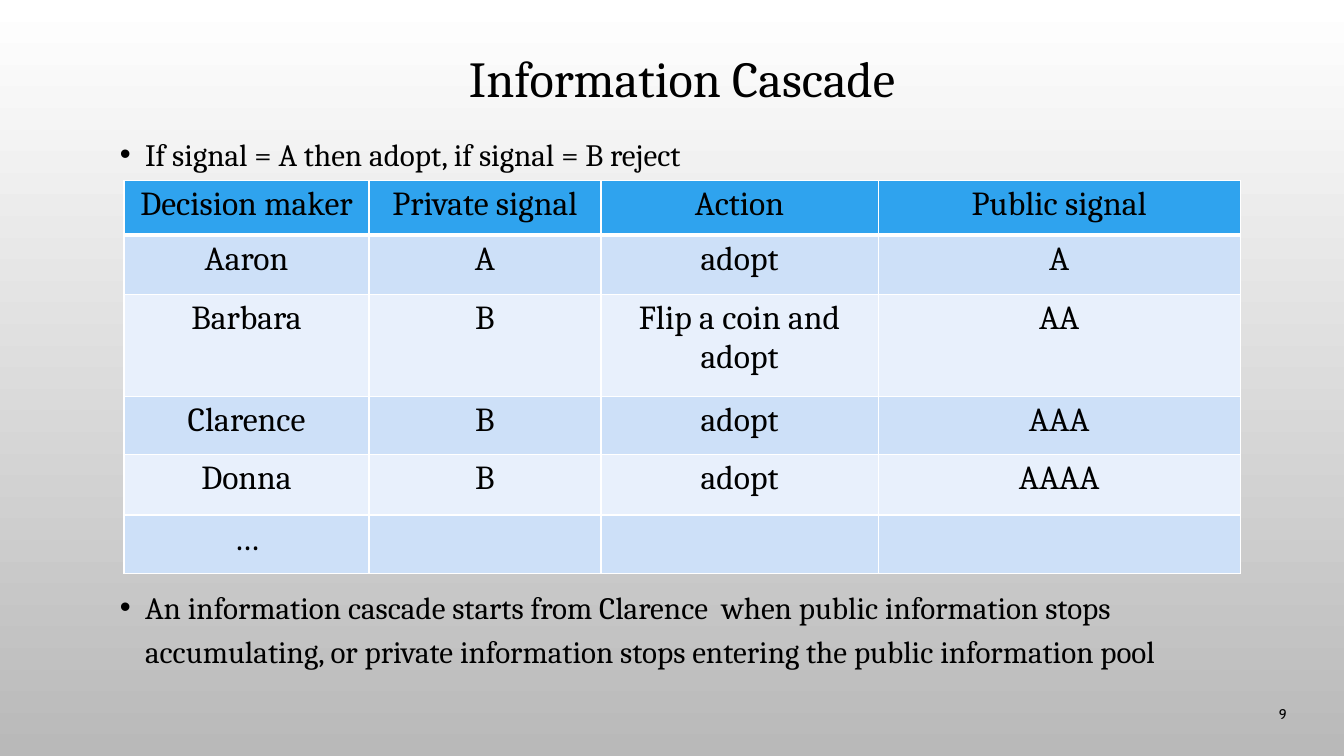
from lxml import etree
from pptx import Presentation
from pptx.dml.color import RGBColor
from pptx.enum.text import MSO_ANCHOR, PP_ALIGN
from pptx.oxml.ns import qn
from pptx.util import Inches, Pt

CENTER, RIGHT, LEFT = PP_ALIGN.CENTER, PP_ALIGN.RIGHT, PP_ALIGN.LEFT
TOP, MIDDLE = MSO_ANCHOR.TOP, MSO_ANCHOR.MIDDLE
BLACK, WHITE, GREY = "000000", "FFFFFF", "B9B9B9"
HEADER_BLUE, BAND_BLUES = "2FA3EE", ("CDE0F8", "E8F0FC")


def color(hex_value):
    return RGBColor.from_string(hex_value)


def write(frame, text, size, align, font="Cambria"):
    """Put one formatted run in the first paragraph and return that paragraph."""
    para = frame.paragraphs[0]
    para.alignment = align
    span = para.add_run()
    span.text = text
    formats = {"name": font, "size": Pt(size), "bold": False}
    for name, value in formats.items():
        setattr(span.font, name, value)
    span.font.color.rgb = color(BLACK)
    return para


deck = Presentation()
deck.slide_width, deck.slide_height = Inches(13.33), Inches(7.5)
slide = deck.slides.add_slide(deck.slide_layouts[6])

background = slide.background.fill
background.gradient()
background.gradient_angle = 270
for stop, shade in zip(background.gradient_stops, (WHITE, GREY)):
    stop.color.rgb = color(shade)

# Text: place, wording, size, alignment, anchor, font, line spacing, bulleted
texts = [
    ((1.1, 0.36, 11.33, 0.9), "Information Cascade",
     36, CENTER, MIDDLE, "Cambria", 0.9, False),
    ((1.09, 1.22, 11.02, 0.55), "If signal = A then adopt, if signal = B reject",
     22.2, LEFT, TOP, "Cambria", 1.2, True),
    ((1.09, 5.71, 11.02, 1.05),
     "An information cascade starts from Clarence  when public information stops "
     "accumulating, or private information stops entering the public information pool",
     22.2, LEFT, TOP, "Cambria", 1.2, True),
    ((12.02, 6.88, 0.84, 0.4), "9", 10, RIGHT, MIDDLE, "Cabin", 1.0, False),
]
for place, text, size, align, anchor, font, spacing, bulleted in texts:
    box = slide.shapes.add_textbox(*map(Inches, place))
    box.text_frame.word_wrap = True
    box.text_frame.vertical_anchor = anchor
    para = write(box.text_frame, text, size, align, font)
    para.line_spacing = spacing
    if bulleted:
        properties = para._p.get_or_add_pPr()
        properties.set("marL", str(Inches(0.25)))
        properties.set("indent", str(-Inches(0.25)))
        bullet_color = etree.SubElement(properties, qn("a:buClr"))
        etree.SubElement(bullet_color, qn("a:srgbClr"), val=BLACK)
        etree.SubElement(properties, qn("a:buFont"), typeface="Arial")
        etree.SubElement(properties, qn("a:buChar"), char="•")

# Decision table
decisions = [
    ("Decision maker", "Private signal", "Action", "Public signal"),
    ("Aaron", "A", "adopt", "A"),
    ("Barbara", "B", "Flip a coin and adopt", "AA"),
    ("Clarence", "B", "adopt", "AAA"),
    ("Donna", "B", "adopt", "AAAA"),
    ("…", "", "", ""),
]
column_widths = (2.43, 2.3, 2.75, 3.59)
row_heights = (0.54, 0.59, 1.01, 0.58, 0.6, 0.58)
table = slide.shapes.add_table(
    len(row_heights), len(column_widths), Inches(1.23), Inches(1.79),
    Inches(sum(column_widths)), Inches(sum(row_heights))).table
for column, width in zip(table.columns, column_widths):
    column.width = Inches(width)
for row, height in zip(table.rows, row_heights):
    row.height = Inches(height)

for row_index, entries in enumerate(decisions):
    fill = BAND_BLUES[(row_index - 1) % 2] if row_index else HEADER_BLUE
    border_widths = {"L": 1, "R": 1,
                     "T": 3 if row_index == 1 else 1,
                     "B": 3 if row_index == 0 else 1}
    for column_index, entry in enumerate(entries):
        cell = table.cell(row_index, column_index)
        if entry:
            write(cell.text_frame, entry, 24, CENTER)
        cell_properties = cell._tc.get_or_add_tcPr()
        for side, width in border_widths.items():
            border = etree.SubElement(cell_properties, qn(f"a:ln{side}"), w=str(Pt(width)))
            border_fill = etree.SubElement(border, qn("a:solidFill"))
            etree.SubElement(border_fill, qn("a:srgbClr"), val=WHITE)
        cell.fill.solid()
        cell.fill.fore_color.rgb = color(fill)

deck.save("out.pptx")
